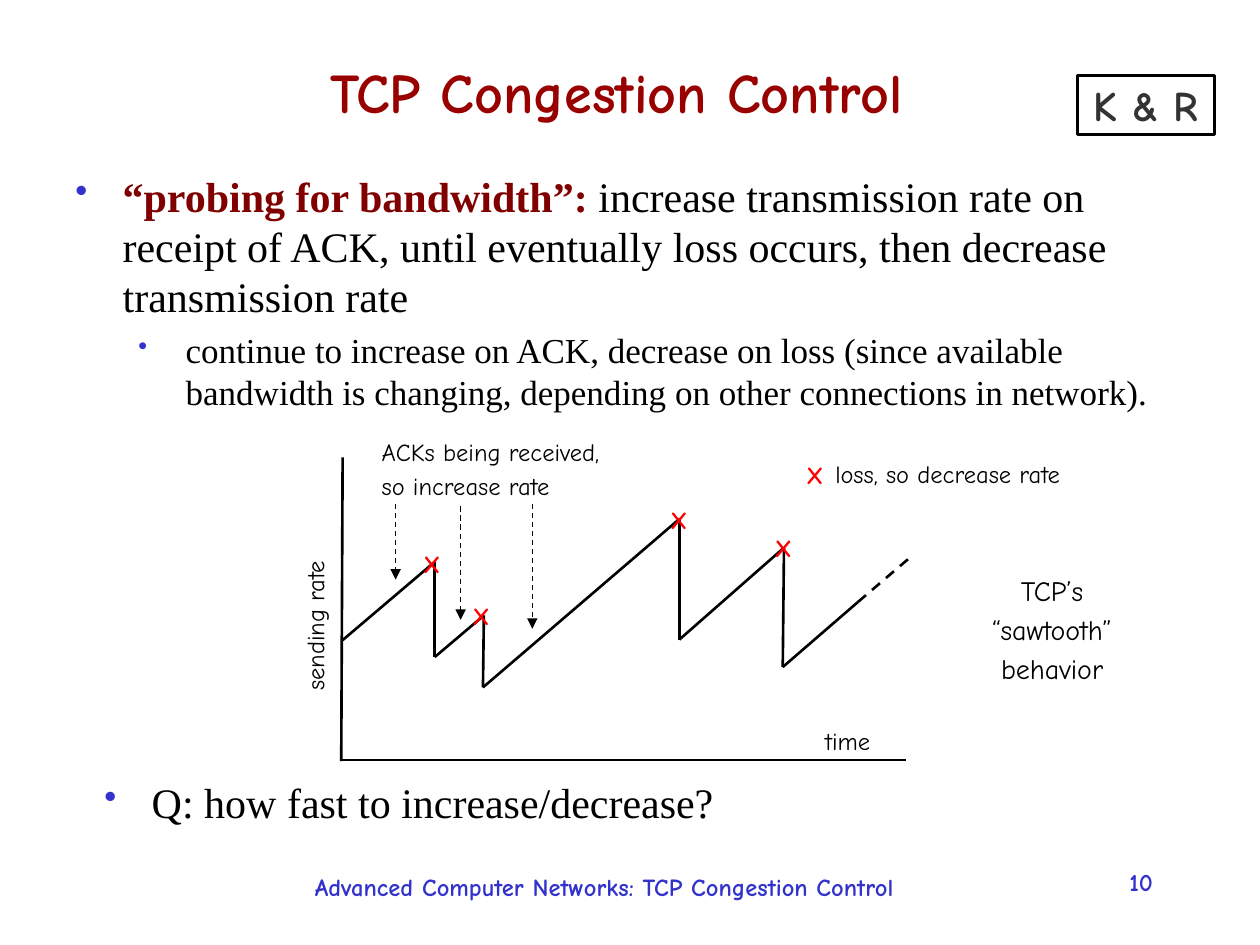
"""Build the TCP congestion control slide with its sawtooth diagram."""
from itertools import pairwise

from lxml.etree import SubElement
from pptx import Presentation
from pptx.dml.color import RGBColor
from pptx.enum.dml import MSO_LINE as Dash
from pptx.enum.shapes import MSO_CONNECTOR as Connector, MSO_SHAPE as Shape
from pptx.enum.text import MSO_ANCHOR as Anchor, MSO_AUTO_SIZE as AutoSize, PP_ALIGN as Align
from pptx.oxml.ns import qn
from pptx.util import Pt

COMIC, TIMES = "Comic Neue", "Times New Roman"
BLACK, RED, BLUE, MAROON = "000000", "FF0000", "3333CC", "800000"
color = RGBColor.from_string

deck = Presentation()
deck.slide_width, deck.slide_height = Pt(720), Pt(540)
slide = deck.slides.add_slide(deck.slide_layouts[6])
shapes = slide.shapes


def write(box, lines, size, ink=BLACK, bold=False, align=Align.LEFT, wrap=False):
    frame = box.text_frame
    frame.word_wrap = wrap
    frame.auto_size = AutoSize.NONE
    for index, line in enumerate(lines):
        paragraph = frame.paragraphs[0] if index == 0 else frame.add_paragraph()
        paragraph.alignment = align
        paragraph.space_before = Pt(0.2 * size if index else 0)
        run = paragraph.add_run()
        run.text = line
        run.font.name, run.font.size, run.font.bold = COMIC, Pt(size), bold
        run.font.color.rgb = color(ink)
    return box


def draw(start, end, width=1.5, dash=None, arrow=False):
    line = shapes.add_connector(Connector.STRAIGHT, *map(Pt, (*start, *end)))
    line.line.color.rgb = color(BLACK)
    line.line.width = Pt(width)
    if dash:
        line.line.dash_style = dash
    if arrow:
        SubElement(line.line._get_or_add_ln(), qn("a:tailEnd"), type="triangle")
    SubElement(line._element.spPr, qn("a:effectLst"))


title = shapes.add_textbox(Pt(19.4), Pt(10), Pt(666), Pt(84.2))
title.text_frame.vertical_anchor = Anchor.MIDDLE
write(title, ["TCP Congestion Control"], 32, "990000", True, Align.CENTER, True)

probing = [
    (0, 24, 85, [("“probing for bandwidth”: ", MAROON, True),
                 ("increase transmission rate on receipt of ACK, until eventually loss occurs, "
                  "then decrease transmission rate", BLACK, False)]),
    (1, 20, 75, [("continue to increase on ACK, decrease on loss (since available bandwidth is "
                  "changing, depending on other connections in network).", BLACK, False)]),
]
question = [(0, 24, 85, [("Q: how fast to increase/decrease?", BLACK, False)])]
for left, top, height, points in [(36, 93.6, 113.8, probing), (52.6, 440, 45.4, question)]:
    frame = shapes.add_textbox(Pt(left), Pt(top), Pt(648), Pt(height)).text_frame
    frame.word_wrap = True
    for index, (level, size, bullet_size, parts) in enumerate(points):
        paragraph = frame.paragraphs[0] if index == 0 else frame.add_paragraph()
        paragraph.level = level
        paragraph.space_before = Pt(0.2 * size if index else 0)
        properties = paragraph._p.get_or_add_pPr()
        properties.set("marL", str(Pt(27 + 36 * level)))
        properties.set("indent", str(-Pt(27)))
        bullet_color = SubElement(properties, qn("a:buClr"))
        SubElement(bullet_color, qn("a:srgbClr"), val=BLUE)
        SubElement(properties, qn("a:buSzPct"), val=str(bullet_size * 1000))
        SubElement(properties, qn("a:buChar"), char="•")
        for words, ink, bold in parts:
            run = paragraph.add_run()
            run.text = words
            run.font.name, run.font.size, run.font.bold = TIMES, Pt(size), bold
            run.font.color.rgb = color(ink)

draw((195.8, 261.4), (195, 434.9))
draw((194.4, 434.2), (517.7, 434.2))

sawtooth = [(195.8, 365.8), (248.4, 321.1), (248.4, 375.5), (276.5, 351.7), (276, 392.8),
            (388.2, 296.6), (388.2, 365.5), (448, 313), (447.3, 381.2), (490.3, 344)]
for start, end in pairwise(sawtooth):
    draw(start, end)
draw(sawtooth[-1], (521.3, 317.5), dash=Dash.DASH)

for x, top, bottom in [(226.1, 288, 331.2), (263.2, 289.4, 354.2), (304.2, 288, 359.3)]:
    draw((x, top), (x, bottom), 0.75, Dash.DASH, True)

losses = [(234.7, 310.3), (262.8, 339.8), (375.8, 285.1), (435.6, 301), (453.6, 259.2)]
for left, top in losses:
    cross = shapes.add_textbox(Pt(left), Pt(top), Pt(24.5), Pt(23.8))
    write(cross, ["X"], 14, RED, True, Align.CENTER)
loss_label = shapes.add_textbox(Pt(470.2), Pt(258.5), Pt(157), Pt(23.8))
write(loss_label, ["loss, so decrease rate"], 14)
shapes.add_group_shape([cross, loss_label])

acks = shapes.add_textbox(Pt(211), Pt(246.2), Pt(154.8), Pt(41))
write(acks, ["ACKs being received,", "so increase rate"], 14)
rate_axis = shapes.add_textbox(Pt(131.8), Pt(342), Pt(95.8), Pt(23.8))
rate_axis.rotation = 270
write(rate_axis, ["sending rate"], 14)
time_axis = shapes.add_textbox(Pt(464.4), Pt(411.1), Pt(43.2), Pt(23.8))
write(time_axis, ["time"], 14)
behavior = shapes.add_textbox(Pt(553.7), Pt(324), Pt(95), Pt(64.8))
write(behavior, ["TCP’s", "“sawtooth”", "behavior"], 16, align=Align.CENTER)

footer = shapes.add_textbox(Pt(172.8), Pt(494.6), Pt(391), Pt(30.2))
write(footer, ["Advanced Computer Networks: TCP Congestion Control"], 14, BLUE, True, wrap=True)
page = shapes.add_textbox(Pt(558), Pt(491.8), Pt(108), Pt(36))
write(page, ["10"], 14, BLUE, True, Align.RIGHT, True)

credit = shapes.add_shape(Shape.RECTANGLE, Pt(615.6), Pt(43.2), Pt(78.5), Pt(33.8))
credit.shadow.inherit = False
credit.fill.background()
credit.line.color.rgb = color(BLACK)
credit.line.width = Pt(2)
credit.text_frame.vertical_anchor = Anchor.MIDDLE
write(credit, ["K & R"], 24, "333333", True, Align.CENTER)

deck.save("out.pptx")
